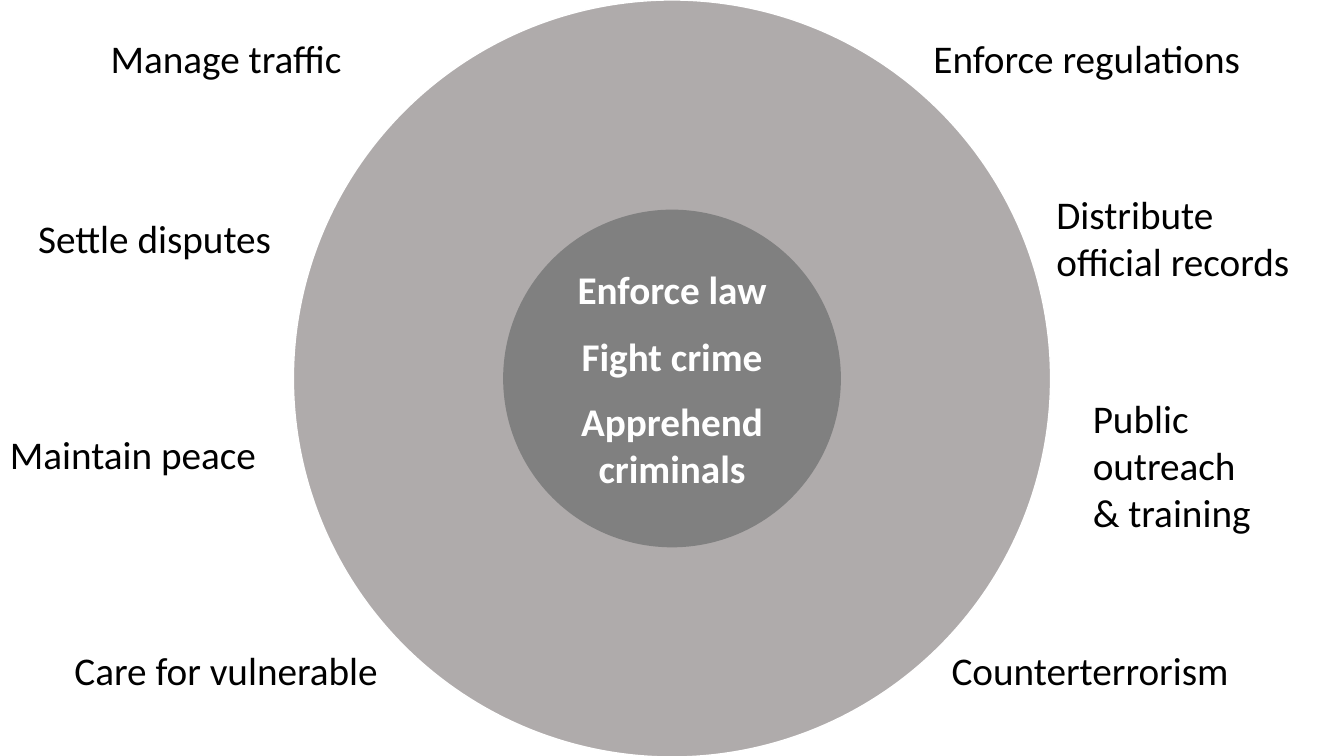
from pptx import Presentation
from pptx import util as u
from pptx.dml.color import RGBColor
from pptx.enum import shapes, text

SLIDE = (13.33, 7.5)
CENTER = (6.665, 3.755)
RINGS = [
    {"size": 7.51, "fill": "AFABAB", "line": "FFFFFF"},
    {"size": 3.35, "fill": "808080", "line": None},
]
CORE_TASKS = [("Enforce law", 14), ("Fight crime", 13), ("Apprehend criminals", 0)]
OUTER_TASKS = [
    (1, 0.29, 2.64, ["Manage traffic"]),
    (0.28, 2.08, 2.66, ["Settle disputes"]),
    (0, 4.22, 2.74, ["Maintain peace"]),
    (0.64, 6.36, 3.36, ["Care for vulnerable"]),
    (9.16, 0.29, 3.44, ["Enforce regulations"]),
    (10.38, 1.84, 2.66, ["Distribute", "official records"]),
    (10.74, 3.86, 2.6, ["Public", "outreach", "& training"]),
    (9.34, 6.36, 3.09, ["Counterterrorism"]),
]
LINE_HEIGHT, PADDING = 0.47, 0.1
FONT = {"name": "Calibri", "size": u.Pt(28)}


def color(value):
    return RGBColor.from_string(value)


def add_lines(tf, lines, ink, bold=False, align=None):
    for i, (line, gap) in enumerate(lines):
        p = tf.paragraphs[0] if i == 0 else tf.add_paragraph()
        p.alignment = align
        p.space_after = u.Pt(gap)
        r = p.add_run()
        r.text = line
        for key, value in {**FONT, "bold": bold}.items():
            setattr(r.font, key, value)
        r.font.color.rgb = color(ink)


def add_ring(s, size, fill, line):
    left, top = (c - size / 2 for c in CENTER)
    sp = s.shapes.add_shape(shapes.MSO_SHAPE.OVAL, *map(u.Inches, (left, top, size, size)))
    sp.shadow.inherit = False
    sp.fill.solid()
    sp.fill.fore_color.rgb = color(fill)
    if line:
        sp.line.color.rgb = color(line)
        sp.line.width = u.Pt(1)
    else:
        sp.line.fill.background()
    return sp


prs = Presentation()
prs.slide_width, prs.slide_height = map(u.Inches, SLIDE)
s = prs.slides.add_slide(prs.slide_layouts[6])

outer, core = [add_ring(s, **ring) for ring in RINGS]
core.text_frame.vertical_anchor = text.MSO_ANCHOR.MIDDLE
add_lines(core.text_frame, CORE_TASKS, "FFFFFF", True, text.PP_ALIGN.CENTER)

for left, top, width, lines in OUTER_TASKS:
    height = LINE_HEIGHT * len(lines) + PADDING
    tf = s.shapes.add_textbox(*map(u.Inches, (left, top, width, height))).text_frame
    tf.word_wrap = len(lines) > 2
    tf.auto_size = text.MSO_AUTO_SIZE.SHAPE_TO_FIT_TEXT
    add_lines(tf, [(line, 0) for line in lines], "000000")

prs.save("out.pptx")
